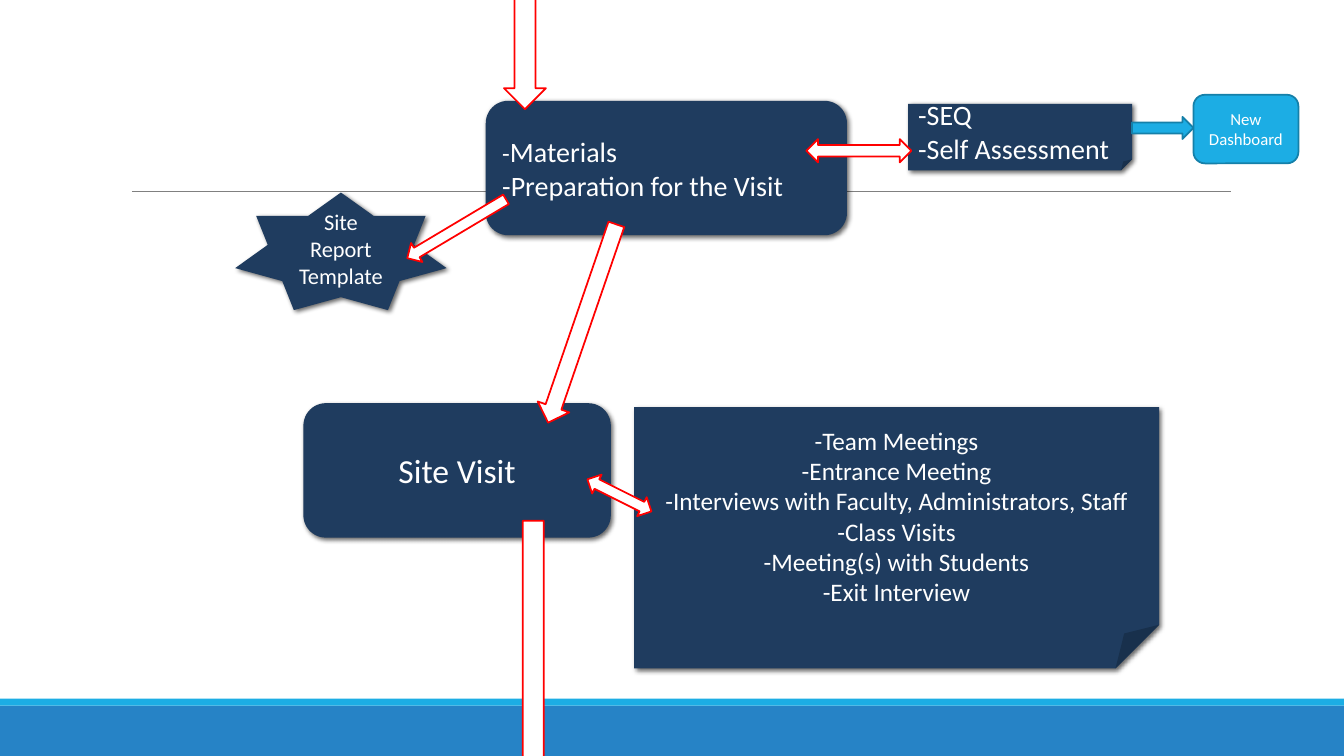
from dataclasses import dataclass

from lxml import etree
from pptx import Presentation
from pptx.dml.color import RGBColor
from pptx.enum.shapes import MSO_CONNECTOR, MSO_SHAPE
from pptx.enum.text import MSO_ANCHOR, PP_ALIGN
from pptx.oxml.ns import qn
from pptx.shapes.autoshape import Shape
from pptx.shapes.shapetree import SlideShapes
from pptx.text.text import _Paragraph
from pptx.util import Pt

RECT = MSO_SHAPE.RECTANGLE
ROUNDED = MSO_SHAPE.ROUNDED_RECTANGLE
FOLDED = MSO_SHAPE.FOLDED_CORNER
STAR = MSO_SHAPE.STAR_7_POINT
DOWN = MSO_SHAPE.DOWN_ARROW
RIGHT = MSO_SHAPE.RIGHT_ARROW
BOTH_WAYS = MSO_SHAPE.LEFT_RIGHT_ARROW
LEFT_ALIGN = PP_ALIGN.LEFT
CENTER = PP_ALIGN.CENTER
MIDDLE = MSO_ANCHOR.MIDDLE
STRAIGHT = MSO_CONNECTOR.STRAIGHT

WIDTH, HEIGHT = 960, 540
WHITE, NAVY, SKY, BLUE = "FFFFFF", "1F3C5F", "1CADE4", "2683C6"
RED, TEAL, GRAY = "FF0000", "1580A9", "808080"
FRAME_FORMAT = {"word_wrap": True, "vertical_anchor": MIDDLE}


@dataclass(frozen=True)
class Look:
    fill: str
    outline: str = ""
    shadow: bool = False


@dataclass(frozen=True)
class Item:
    kind: MSO_SHAPE
    look: Look
    left: float
    top: float
    width: float
    height: float
    rotation: float = 0
    lines: tuple[str, ...] = ()
    size: float = 18
    align: PP_ALIGN = CENTER
    first_dash_size: float = 0


BAND = Look(BLUE)
STRIPE = Look(SKY)
STEP = Look(NAVY, shadow=True)
FLOW = Look(WHITE, RED)
DASHBOARD = Look(SKY, TEAL)

BACKDROP = (
    Item(RECT, BAND, 0, 504, WIDTH, 36),
    Item(RECT, STRIPE, 0, 499, WIDTH, 5),
)
PROCESS = (
    Item(ROUNDED, STEP, 347, 72, 258, 96, size=20, align=LEFT_ALIGN,
         lines=("-Materials", "-Preparation for the Visit"), first_dash_size=18),
    Item(DOWN, FLOW, 360, -18, 30, 96),
    Item(ROUNDED, STEP, 216.7, 288, 219.6, 96, lines=("Site Visit",), size=24),
    Item(DOWN, FLOW, 404, 156.2, 23.8, 149.8, 19),
    Item(STAR, STEP, 168, 137.5, 151, 84, lines=("Site Report Template",), size=16),
    Item(RIGHT, FLOW, 285.1, 155.5, 82.1, 15.8, 149.2),
    Item(FOLDED, STEP, 648.7, 74.2, 160, 47.5, size=20, align=LEFT_ALIGN,
         lines=("-SEQ", "-Self Assessment")),
    Item(BOTH_WAYS, FLOW, 576, 99.4, 75, 16.6),
    Item(FOLDED, STEP, 452.9, 290.9, 375, 186.5,
         lines=("-Team Meetings", "-Entrance Meeting",
                "-Interviews with Faculty, Administrators, Staff", "-Class Visits",
                "-Meeting(s) with Students", "-Exit Interview")),
    Item(BOTH_WAYS, FLOW, 416.9, 346.3, 51.1, 15.1, 26.6),
    Item(DOWN, FLOW, 366, 372, 30, 186),
    Item(RIGHT, DASHBOARD, 808.6, 83.5, 43.9, 15.8),
    Item(ROUNDED, DASHBOARD, 852.5, 67.7, 75, 49, lines=("New", "Dashboard"), size=12),
)


def color(value: str) -> RGBColor:
    return RGBColor.from_string(value)


def add_shadow(shape: Shape) -> None:
    effects = shape._element.spPr.find(qn("a:effectLst"))
    settings = {"blurRad": Pt(3.5), "dist": Pt(2), "dir": 45 * 60000, "rotWithShape": 0}
    outer = etree.SubElement(effects, qn("a:outerShdw"),
                             {key: str(int(value)) for key, value in settings.items()})
    black = etree.SubElement(outer, qn("a:srgbClr"), val="000000")
    etree.SubElement(black, qn("a:alpha"), val="60000")


def add_run(paragraph: _Paragraph, text: str, size: float) -> None:
    run = paragraph.add_run()
    run.text = text
    for name, value in {"name": "Calibri", "size": Pt(size)}.items():
        setattr(run.font, name, value)
    run.font.color.rgb = color(WHITE)


def write(shape: Shape, item: Item) -> None:
    frame = shape.text_frame
    for name, value in FRAME_FORMAT.items():
        setattr(frame, name, value)
    for index, line in enumerate(item.lines):
        paragraph = frame.add_paragraph() if index else frame.paragraphs[0]
        paragraph.alignment = item.align
        if item.first_dash_size and index == 0:
            add_run(paragraph, line[:1], item.first_dash_size)
            line = line[1:]
        add_run(paragraph, line, item.size)


def draw(shapes: SlideShapes, item: Item) -> None:
    shape = shapes.add_shape(item.kind, Pt(item.left), Pt(item.top),
                             Pt(item.width), Pt(item.height))
    shape.rotation = item.rotation
    shape.fill.solid()
    shape.fill.fore_color.rgb = color(item.look.fill)
    if item.look.outline:
        shape.line.color.rgb = color(item.look.outline)
        shape.line.width = Pt(1.25)
    else:
        shape.line.fill.background()
    shape.shadow.inherit = False
    if item.look.shadow:
        add_shadow(shape)
    if item.lines:
        write(shape, item)


def draw_rule(shapes: SlideShapes) -> None:
    rule = shapes.add_connector(STRAIGHT, Pt(94.3), Pt(136.8), Pt(879), Pt(136.8))
    rule.line.color.rgb = color(GRAY)
    rule.line.width = Pt(0.5)
    etree.SubElement(rule._element.spPr, qn("a:effectLst"))


def main() -> None:
    deck = Presentation()
    deck.slide_width, deck.slide_height = Pt(WIDTH), Pt(HEIGHT)
    shapes = deck.slides.add_slide(deck.slide_layouts[6]).shapes
    for item in BACKDROP:
        draw(shapes, item)
    draw_rule(shapes)
    for item in PROCESS:
        draw(shapes, item)
    deck.save("out.pptx")


if __name__ == "__main__":
    main()
